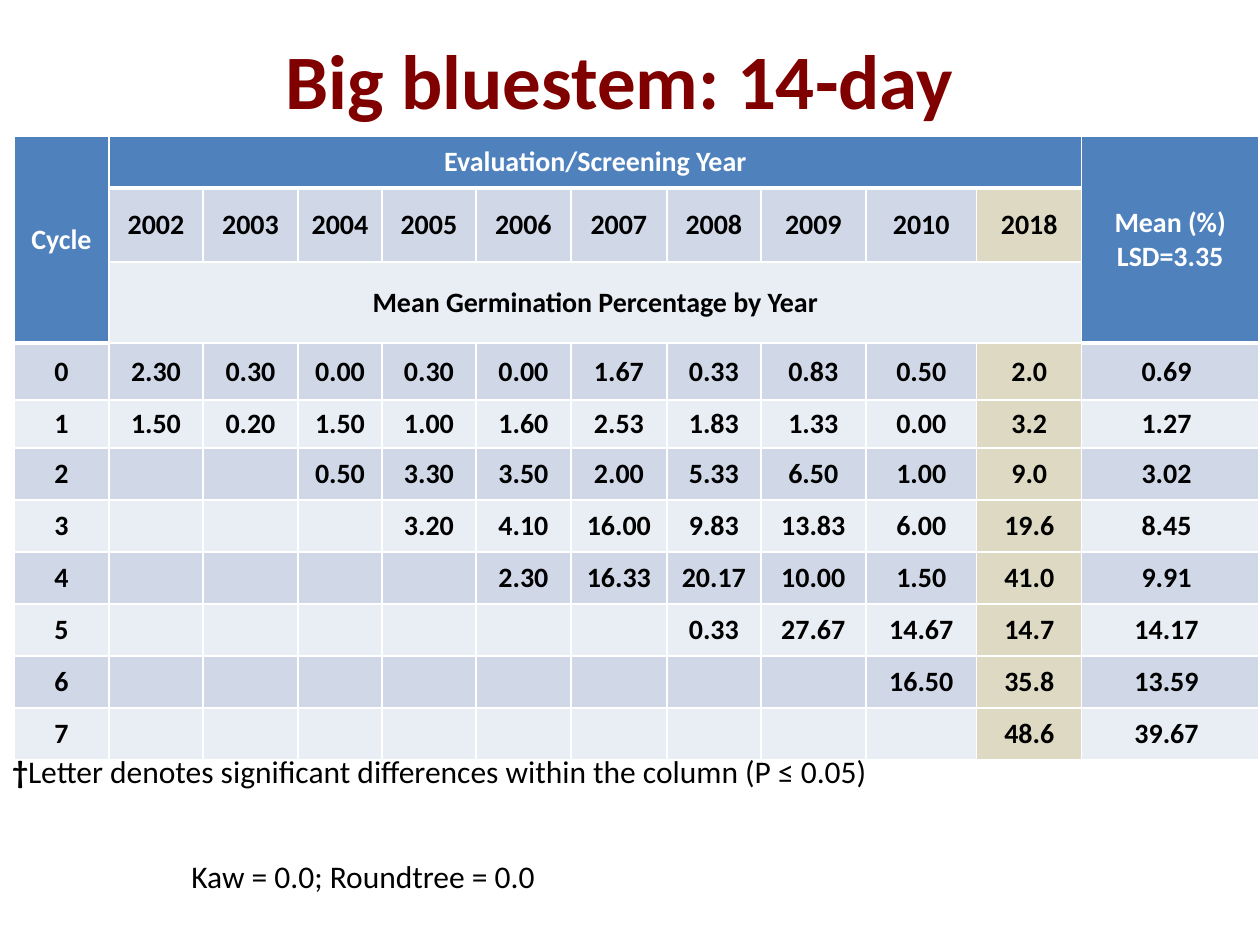
from dataclasses import dataclass

from lxml.etree import SubElement
from pptx import Presentation
from pptx.dml.color import RGBColor
from pptx.enum.text import MSO_ANCHOR, MSO_AUTO_SIZE, PP_ALIGN
from pptx.oxml.ns import qn
from pptx.slide import Slide
from pptx.table import Table, _Cell
from pptx.text.text import _Paragraph
from pptx.util import Emu, Pt


@dataclass(frozen=True)
class Theme:
    font: str = "Calibri"
    title: str = "800000"
    text: str = "000000"
    white: str = "FFFFFF"
    header: str = "4F81BD"
    dark_band: str = "D0D8E8"
    light_band: str = "E9EDF4"
    highlight: str = "DDD9C3"
    title_size: int = 44
    table_size: int = 16
    note_size: int = 18
    thin_line: int = 1
    thick_line: int = 3


@dataclass(frozen=True)
class Span:
    text: str
    size: int
    color: str
    bold: bool = False


@dataclass(frozen=True)
class Note:
    left: int
    top: int
    width: int
    height: int
    spans: tuple[Span, ...]


THEME = Theme()
PIXELS_PER_INCH = 126
COLUMN_WIDTHS = [95, 94, 95, 84, 94, 95, 96, 94, 105, 111, 105, 177]
ROW_HEIGHTS = [52, 74, 81, 57, 48] + [52] * 6
HEADER_ROWS = 3
YEARS = [*range(2002, 2011), 2018]
MEAN_COLUMN = len(YEARS) + 1
HIGHLIGHT_COLUMN = len(YEARS)
CYCLES = [
    ["2.30", "0.30", "0.00", "0.30", "0.00", "1.67", "0.33", "0.83", "0.50", "2.0", "0.69"],
    ["1.50", "0.20", "1.50", "1.00", "1.60", "2.53", "1.83", "1.33", "0.00", "3.2", "1.27"],
    ["0.50", "3.30", "3.50", "2.00", "5.33", "6.50", "1.00", "9.0", "3.02"],
    ["3.20", "4.10", "16.00", "9.83", "13.83", "6.00", "19.6", "8.45"],
    ["2.30", "16.33", "20.17", "10.00", "1.50", "41.0", "9.91"],
    ["0.33", "27.67", "14.67", "14.7", "14.17"],
    ["16.50", "35.8", "13.59"],
    ["48.6", "39.67"],
]
NOTES = [
    Note(0, 746, 892, 50, (
        Span("†", THEME.note_size, THEME.text, True),
        Span("Letter denotes significant differences within the column (P ≤ 0.05)",
             THEME.note_size, THEME.text),
    )),
    Note(179, 851, 373, 50, (
        Span("Kaw = 0.0; Roundtree = 0.0", THEME.note_size, THEME.text),
    )),
]


def px(length: int) -> Emu:
    return Emu(round(length * 914400 / PIXELS_PER_INCH))


def add_span(para: _Paragraph, span: Span) -> None:
    run = para.add_run()
    run.text = span.text
    run.font.name = THEME.font
    run.font.size = Pt(span.size)
    run.font.bold = span.bold
    run.font.color.rgb = RGBColor.from_string(span.color)


def add_title(page: Slide, text: str) -> None:
    title = page.shapes.title
    title.left, title.top, title.width, title.height = px(63), px(0), px(1134), px(158)
    frame = title.text_frame
    frame.vertical_anchor = MSO_ANCHOR.MIDDLE
    frame.margin_right = px(33)
    para = frame.paragraphs[0]
    para.alignment = PP_ALIGN.CENTER
    add_span(para, Span(text, THEME.title_size, THEME.title, True))


def set_borders(cell: _Cell, bottom: int) -> None:
    properties = cell._tc.get_or_add_tcPr()
    widths = {"a:lnL": THEME.thin_line, "a:lnR": THEME.thin_line,
              "a:lnT": THEME.thin_line, "a:lnB": bottom}
    for tag, width in widths.items():
        line = SubElement(properties, qn(tag), w=str(Pt(width)))
        fill = SubElement(line, qn("a:solidFill"))
        SubElement(fill, qn("a:srgbClr"), val=THEME.white)


def style_cell(cell: _Cell, fill: str, bottom: int = THEME.thin_line) -> None:
    set_borders(cell, bottom)
    cell.fill.solid()
    cell.fill.fore_color.rgb = RGBColor.from_string(fill)
    cell.vertical_anchor = MSO_ANCHOR.MIDDLE


def write_cell(cell: _Cell, lines: list[str], color: str = THEME.text) -> None:
    frame = cell.text_frame
    for index, line in enumerate(lines):
        para = frame.add_paragraph() if index else frame.paragraphs[0]
        para.alignment = PP_ALIGN.CENTER
        add_span(para, Span(line, THEME.table_size, color, True))


def cell_fill(row: int, column: int) -> str:
    is_side_header = row < HEADER_ROWS and column in (0, MEAN_COLUMN)
    if row == 0 or is_side_header:
        return THEME.header
    if column == HIGHLIGHT_COLUMN and row != HEADER_ROWS - 1:
        return THEME.highlight
    return THEME.dark_band if row % 2 else THEME.light_band


def fill_header(table: Table) -> None:
    last = HEADER_ROWS - 1
    table.cell(0, 0).merge(table.cell(last, 0))
    table.cell(0, MEAN_COLUMN).merge(table.cell(last, MEAN_COLUMN))
    for row in (0, last):
        table.cell(row, 1).merge(table.cell(row, HIGHLIGHT_COLUMN))
    write_cell(table.cell(0, 0), ["Cycle"], THEME.white)
    write_cell(table.cell(0, 1), ["Evaluation/Screening Year"], THEME.white)
    write_cell(table.cell(0, MEAN_COLUMN), ["Mean (%)", "LSD=3.35"], THEME.white)
    write_cell(table.cell(last, 1), ["Mean Germination Percentage by Year"])
    for column, year in enumerate(YEARS, start=1):
        write_cell(table.cell(1, column), [str(year)])


def fill_cycles(table: Table) -> None:
    for cycle, values in enumerate(CYCLES):
        row = HEADER_ROWS + cycle
        write_cell(table.cell(row, 0), [str(cycle)])
        first_column = MEAN_COLUMN + 1 - len(values)
        for column, value in enumerate(values, start=first_column):
            write_cell(table.cell(row, column), [value])
        table.cell(row, MEAN_COLUMN).margin_right = px(20)


def add_germination_table(page: Slide) -> None:
    table = page.shapes.add_table(
        len(ROW_HEIGHTS), len(COLUMN_WIDTHS), px(14), px(136),
        px(sum(COLUMN_WIDTHS)), px(sum(ROW_HEIGHTS))).table
    for column, width in zip(table.columns, COLUMN_WIDTHS):
        column.width = px(width)
    for row, height in zip(table.rows, ROW_HEIGHTS):
        row.height = px(height)
    for row in range(len(ROW_HEIGHTS)):
        for column in range(len(COLUMN_WIDTHS)):
            bottom = THEME.thin_line if row else THEME.thick_line
            style_cell(table.cell(row, column), cell_fill(row, column), bottom)
    fill_header(table)
    fill_cycles(table)


def add_note(page: Slide, note: Note) -> None:
    box = page.shapes.add_textbox(px(note.left), px(note.top), px(note.width), px(note.height))
    frame = box.text_frame
    frame.word_wrap = False
    frame.auto_size = MSO_AUTO_SIZE.SHAPE_TO_FIT_TEXT
    for span in note.spans:
        add_span(frame.paragraphs[0], span)


def main() -> None:
    deck = Presentation()
    deck.slide_width, deck.slide_height = px(1260), px(945)
    page = deck.slides.add_slide(deck.slide_layouts[5])
    add_title(page, "Big bluestem: 14-day")
    add_germination_table(page)
    for note in NOTES:
        add_note(page, note)
    deck.save("out.pptx")


if __name__ == "__main__":
    main()
